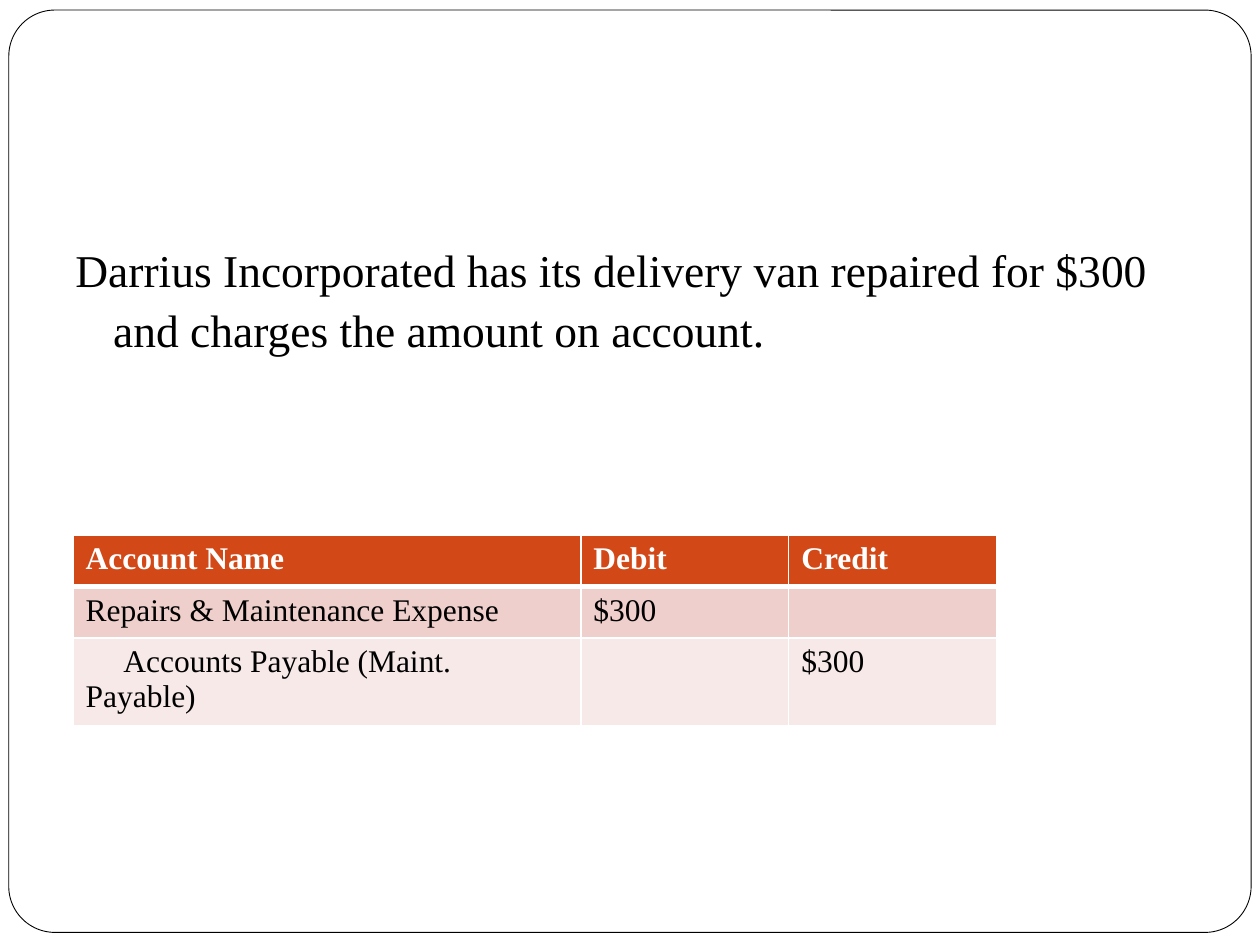
from lxml.etree import SubElement
from pptx import Presentation
from pptx.dml.color import RGBColor
from pptx.enum.shapes import MSO_SHAPE
from pptx.oxml.ns import qn
from pptx.util import Inches, Pt

WHITE = RGBColor(0xFF, 0xFF, 0xFF)
BLACK = RGBColor(0x00, 0x00, 0x00)
ORANGE = RGBColor(0xD3, 0x48, 0x17)
ROSE = RGBColor(0xEF, 0xCF, 0xCC)
PALE_ROSE = RGBColor(0xF7, 0xE9, 0xE8)
FONT = "Times New Roman"

ENTRY = [
    ("Account Name", "Debit", "Credit"),
    ("Repairs & Maintenance Expense", "$300", ""),
    ("Accounts Payable (Maint. Payable)", "", "$300"),
]
ROW_FILLS = [ORANGE, ROSE, PALE_ROSE]


def format_text(paragraph, size, color, bold=False):
    """Apply the slide's font to every run of a paragraph."""
    for run in paragraph.runs:
        run.font.name = FONT
        run.font.size = Pt(size)
        run.font.bold = bold
        run.font.color.rgb = color


def set_indent(paragraph, margin, first_line):
    """Set the left margin and first-line indent of a paragraph."""
    properties = paragraph._p.get_or_add_pPr()
    properties.set("marL", str(Inches(margin)))
    properties.set("indent", str(Inches(first_line)))


def set_borders(cell, widths):
    """Draw white borders on a cell, given a width in points per side."""
    properties = cell._tc.get_or_add_tcPr()
    for position, (side, width) in enumerate(widths.items()):
        line = SubElement(properties, qn(f"a:ln{side}"), w=str(Pt(width)))
        fill = SubElement(line, qn("a:solidFill"))
        SubElement(fill, qn("a:srgbClr"), val=str(WHITE))
        properties.remove(line)
        properties.insert(position, line)


def add_frame(slide, left, top, width, height):
    """Add the rounded outline around the slide."""
    frame = slide.shapes.add_shape(
        MSO_SHAPE.ROUNDED_RECTANGLE, left, top, width, height)
    frame.adjustments[0] = 0.05
    frame.shadow.inherit = False
    frame.fill.solid()
    frame.fill.fore_color.rgb = WHITE
    frame.line.color.rgb = BLACK
    frame.line.width = Pt(0.5)


def add_transaction(slide, left, top, width, height):
    """Add the description of the transaction with a hanging indent."""
    text_frame = slide.shapes.add_textbox(left, top, width, height).text_frame
    text_frame.word_wrap = True
    paragraph = text_frame.paragraphs[0]
    paragraph.text = ("Darrius Incorporated has its delivery van repaired for "
                      "$300 and charges the amount on account.")
    paragraph.space_before = Pt(5.8)
    paragraph.line_spacing = 1.1
    set_indent(paragraph, 0.3, -0.3)
    format_text(paragraph, 26, BLACK)


def add_journal_entry(slide, left, top, width, height):
    """Add the journal entry table."""
    table = slide.shapes.add_table(
        len(ENTRY), len(ENTRY[0]), left, top, width, height).table
    amount_width = Inches(1.65)
    table.columns[0].width = width - 2 * amount_width
    table.columns[1].width = table.columns[2].width = amount_width
    for row, (values, fill) in enumerate(zip(ENTRY, ROW_FILLS)):
        header = row == 0
        for column, value in enumerate(values):
            cell = table.cell(row, column)
            cell.text = value
            cell.fill.solid()
            cell.fill.fore_color.rgb = fill
            paragraph = cell.text_frame.paragraphs[0]
            paragraph.font.size = Pt(18)
            format_text(paragraph, 18, WHITE if header else BLACK, header)
            set_borders(cell, {"L": 1, "R": 1, "T": 3 if row == 1 else 1,
                               "B": 3 if header else 1})
    set_indent(table.cell(2, 0).text_frame.paragraphs[0], 0, 0.3)


def main():
    """Build and save the slide."""
    presentation = Presentation()
    presentation.slide_width = Inches(10)
    presentation.slide_height = Inches(7.5)
    slide = presentation.slides.add_slide(presentation.slide_layouts[6])
    add_frame(slide, Inches(0.07), Inches(0.08), Inches(9.86), Inches(7.32))
    add_transaction(slide, Inches(0.5), Inches(1.83), Inches(9), Inches(4.95))
    add_journal_entry(
        slide, Inches(0.58), Inches(4.25), Inches(7.33), Inches(1.22))
    presentation.save("out.pptx")


if __name__ == "__main__":
    main()
